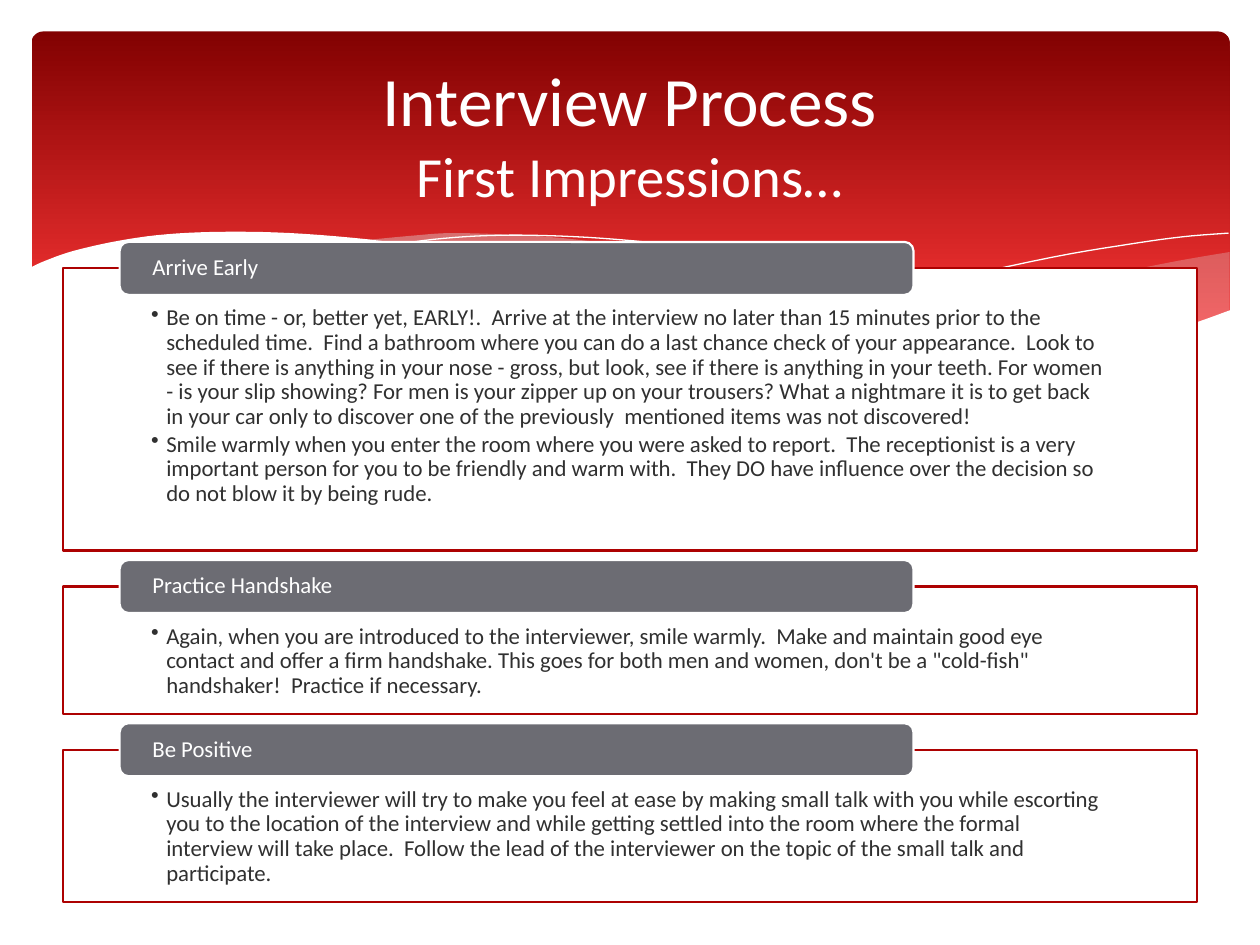
from dataclasses import dataclass
from itertools import chain

from lxml import etree
from pptx import Presentation
from pptx.dml.color import RGBColor
from pptx.enum.shapes import MSO_SHAPE
from pptx.enum.text import MSO_ANCHOR, PP_ALIGN
from pptx.oxml.ns import qn
from pptx.util import Emu, Inches, Pt

RECTANGLE = MSO_SHAPE.RECTANGLE
ROUNDED = MSO_SHAPE.ROUNDED_RECTANGLE
TOP, MIDDLE = MSO_ANCHOR.TOP, MSO_ANCHOR.MIDDLE
LEFT, CENTER = PP_ALIGN.LEFT, PP_ALIGN.CENTER
SLIDE_WIDTH, SLIDE_HEIGHT = Inches(10), Inches(7.5)
COLUMN, ROW = SLIDE_WIDTH / 10, SLIDE_HEIGHT / 7.5
PANEL_TOP, PANEL_GAP, TAB_HEIGHT = 2.13, 0.285, 0.42
CURVE_STEPS = 5


@dataclass(frozen=True)
class Theme:
    """Colours and type sizes of the slide."""
    font: str = "Calibri"
    white: str = "FFFFFF"
    dark_red: str = "820101"
    bright_red: str = "FE3737"
    outline: str = "AD0101"
    tab: str = "6C6C73"
    mist: str = "DEDEE0"
    ink: str = "303030"
    title: float = 39.6
    subtitle: float = 32.4
    body: float = 13
    border: float = 1.25


@dataclass(frozen=True)
class Panel:
    """A topic with its height in rows and its bullets."""
    heading: str
    height: float
    bullets: tuple


@dataclass(frozen=True)
class Wave:
    """Smooth edges joined end to end, filled when a colour is given."""
    edges: tuple
    fill: str = ""
    opacity: int = 100


THEME = Theme()

WAVES = (
    Wave((
        ((9.76, 2), (9.35, 2.07), (8.91, 2.16), (8.32, 2.3), (7.53, 2.48), (6.61, 2.65)),
        ((6.61, 2.65), (7.05, 2.71), (7.57, 2.76), (8.03, 2.78), (8.44, 2.77),
         (8.89, 2.72), (9.35, 2.62), (9.76, 2.47)),
    ), THEME.mist, 29),
    Wave((
        ((8.93, 2.73), (8.37, 2.65), (7.75, 2.54), (7.06, 2.4), (6.29, 2.22), (5.69, 2.08),
         (5.14, 1.98), (4.65, 1.91), (4.2, 1.87), (3.61, 1.85), (3.28, 1.87), (2.86, 1.91)),
        ((2.86, 1.91), (3.42, 1.99), (4.04, 2.11), (4.91, 2.32), (5.66, 2.48), (6.34, 2.61),
         (6.95, 2.7), (7.48, 2.76), (8.07, 2.78), (8.57, 2.77), (8.93, 2.73)),
    ), THEME.mist, 40),
    Wave((
        ((3.09, 1.95), (3.44, 1.9), (3.87, 1.87), (4.33, 1.87), (4.89, 1.9), (5.56, 1.97),
         (6.36, 2.08), (7.27, 2.26), (8.31, 2.51), (9.07, 2.72)),
    )),
    Wave((
        ((6.13, 2.57), (6.72, 2.41), (7.48, 2.23), (8.36, 2.04), (8.95, 1.94),
         (9.38, 1.88), (9.75, 1.85)),
    )),
    Wave((
        ((9.77, 2.46), (9.4, 2.59), (8.99, 2.69), (8.5, 2.75), (8.09, 2.77), (7.44, 2.74),
         (6.68, 2.65), (6.03, 2.54), (5.29, 2.39), (4.47, 2.2), (3.91, 2.07), (3.4, 1.97),
         (2.92, 1.9), (2.3, 1.85), (1.77, 1.84), (1.32, 1.86), (0.95, 1.91), (0.59, 1.99),
         (0.36, 2.07), (0.23, 2.13)),
        ((0.23, 3.29), (9.77, 3.29)),
    ), THEME.white),
)

PANELS = (
    Panel("Arrive Early", 2.24, (
        "Be on time - or, better yet, EARLY!.  Arrive at the interview no later than 15 minutes "
        "prior to the scheduled time.  Find a bathroom where you can do a last chance check of "
        "your appearance.  Look to see if there is anything in your nose - gross, but look, see "
        "if there is anything in your teeth. For women - is your slip showing? For men is your "
        "zipper up on your trousers? What a nightmare it is to get back in your car only to "
        "discover one of the previously  mentioned items was not discovered!",
        "Smile warmly when you enter the room where you were asked to report.  The receptionist "
        "is a very important person for you to be friendly and warm with.  They DO have "
        "influence over the decision so do not blow it by being rude.",
    )),
    Panel("Practice Handshake", 1.01, (
        "Again, when you are introduced to the interviewer, smile warmly.  Make and maintain "
        "good eye contact and offer a firm handshake. This goes for both men and women, don't "
        'be a "cold-fish" handshaker!  Practice if necessary.',
    )),
    Panel("Be Positive", 1.21, (
        "Usually the interviewer will try to make you feel at ease by making small talk with "
        "you while escorting you to the location of the interview and while getting settled "
        "into the room where the formal interview will take place.  Follow the lead of the "
        "interviewer on the topic of the small talk and participate.",
    )),
)


def color(value: str) -> RGBColor:
    """Turn a hex string into a colour."""
    return RGBColor.from_string(value)


def place(left: float, top: float, width: float, height: float) -> tuple:
    """Convert columns and rows into slide lengths."""
    return Emu(int(left * COLUMN)), Emu(int(top * ROW)), Emu(int(width * COLUMN)), Emu(int(height * ROW))


def smooth(points: tuple) -> list:
    """Trace a Catmull-Rom curve through grid points."""
    padded = (points[0], *points, points[-1])
    curve = [points[0]]
    for a, b, c, d in zip(padded, padded[1:], padded[2:], padded[3:]):
        for step in range(1, CURVE_STEPS + 1):
            t = step / CURVE_STEPS
            curve.append(tuple(
                q + (r - p) * t / 2 + (2 * p - 5 * q + 4 * r - s) * t**2 / 2
                + (3 * q - p - 3 * r + s) * t**3 / 2
                for p, q, r, s in zip(a, b, c, d)))
    return curve


def draw_wave(slide, wave: Wave) -> None:
    """Draw one filled wave or one white hairline."""
    points = [(x * COLUMN, y * ROW) for x, y in chain.from_iterable(map(smooth, wave.edges))]
    builder = slide.shapes.build_freeform(*points[0], scale=1.0)
    builder.add_line_segments(points[1:], close=bool(wave.fill))
    shape = builder.convert_to_shape()
    shape.shadow.inherit = False
    if not wave.fill:
        shape.fill.background()
        shape.line.color.rgb = color(THEME.white)
        shape.line.width = Pt(0)
        return
    shape.fill.solid()
    shape.fill.fore_color.rgb = color(wave.fill)
    shape.line.fill.background()
    if wave.opacity < 100:
        fill_color = shape.fill._xPr.find(qn("a:solidFill"))[0]
        etree.SubElement(fill_color, qn("a:alpha")).set("val", str(wave.opacity * 1000))


def draw_box(slide, kind: int, box: tuple, fill: str, line: str):
    """Draw a filled and outlined preset shape."""
    shape = slide.shapes.add_shape(kind, *place(*box))
    shape.shadow.inherit = False
    shape.fill.solid()
    shape.fill.fore_color.rgb = color(fill)
    shape.line.color.rgb = color(line)
    shape.line.width = Pt(THEME.border)
    return shape


def write(shape, lines: tuple, sizes: tuple, ink: str, anchor, align, insets: tuple) -> None:
    """Write paragraphs, giving each run of a paragraph its own size."""
    frame = shape.text_frame
    frame.word_wrap = True
    frame.vertical_anchor = anchor
    frame.margin_left, frame.margin_top, frame.margin_right, frame.margin_bottom = map(Inches, insets)
    frame.text = "\n".join(lines)
    for paragraph in frame.paragraphs:
        paragraph.alignment = align
        for run, size in zip(paragraph.runs, sizes):
            run.font.name = THEME.font
            run.font.size = Pt(size)
            run.font.color.rgb = color(ink)


def draw_header(slide) -> None:
    """Draw the red banner, its waves and the title."""
    banner = draw_box(slide, ROUNDED, (0.25, 0.25, 9.51, 2.7), THEME.dark_red, THEME.white)
    banner.adjustments[0] = 0.034
    banner.line.fill.background()
    banner.fill.gradient()
    banner.fill.gradient_angle = 270
    stops = ((0, THEME.dark_red), (0.9, THEME.bright_red))
    for stop, (position, value) in zip(banner.fill.gradient_stops, stops):
        stop.position = position
        stop.color.rgb = color(value)
    for wave in WAVES:
        draw_wave(slide, wave)
    title = slide.shapes.add_textbox(*place(0.5, 0.37, 9, 1.37))
    write(title, ("Interview Process\vFirst Impressions…",), (THEME.title, THEME.subtitle),
          THEME.white, MIDDLE, CENTER, (0.1, 0.05, 0.1, 0.05))


def draw_panel(slide, panel: Panel, top: float) -> None:
    """Draw a bulleted panel with its heading tab across the top edge."""
    body = draw_box(slide, RECTANGLE, (0.5, top, 9, panel.height), THEME.white, THEME.outline)
    write(body, panel.bullets, (THEME.body,), THEME.ink, TOP, LEFT, (0.7, 0.3, 0.7, 0.1))
    for paragraph in body.text_frame.paragraphs:
        paragraph.level = 1
        paragraph.line_spacing = 0.9
        paragraph.space_after = Pt(THEME.body * 0.15)
        properties = paragraph._p.get_or_add_pPr()
        properties.set("marL", str(Inches(0.12)))
        properties.set("indent", str(-Inches(0.12)))
        etree.SubElement(properties, qn("a:buChar")).set("char", "•")
    tab = draw_box(slide, ROUNDED, (0.95, top - TAB_HEIGHT / 2, 6.3, TAB_HEIGHT), THEME.tab, THEME.white)
    write(tab, (panel.heading,), (THEME.body,), THEME.white, MIDDLE, LEFT, (0.24, 0, 0.24, 0))
    tab.text_frame.paragraphs[0].line_spacing = 0.9


def main() -> None:
    """Build and save the slide."""
    presentation = Presentation()
    presentation.slide_width, presentation.slide_height = SLIDE_WIDTH, SLIDE_HEIGHT
    slide = presentation.slides.add_slide(presentation.slide_layouts[6])
    draw_header(slide)
    top = PANEL_TOP
    for panel in PANELS:
        draw_panel(slide, panel, top)
        top += panel.height + PANEL_GAP
    presentation.save("out.pptx")


if __name__ == "__main__":
    main()
